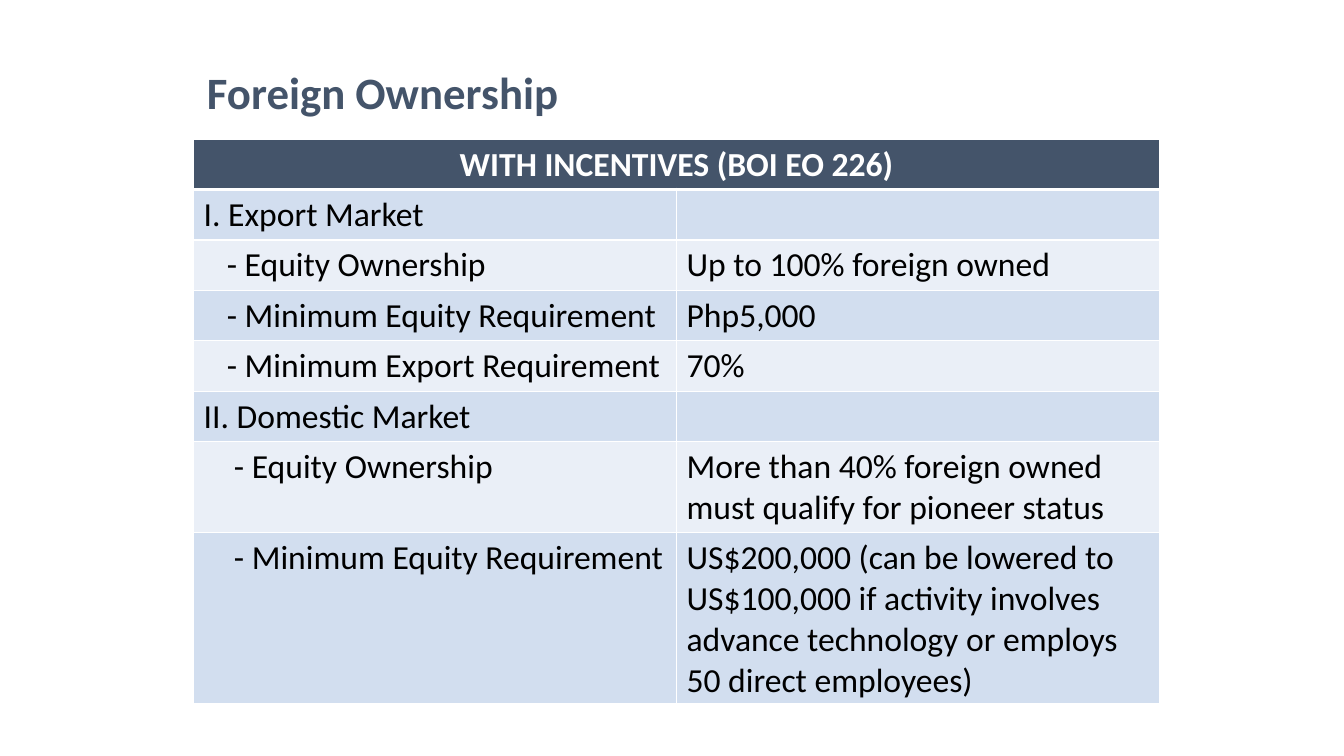
from lxml.etree import SubElement
from pptx import Presentation
from pptx.dml.color import RGBColor
from pptx.enum.shapes import MSO_SHAPE
from pptx.enum.text import MSO_ANCHOR, MSO_AUTO_SIZE, PP_ALIGN
from pptx.oxml import parse_xml
from pptx.oxml.ns import nsdecls, qn
from pptx.util import Inches, Pt

SLATE = RGBColor(0x44, 0x54, 0x6A)
WHITE = RGBColor(0xFF, 0xFF, 0xFF)
BLACK = RGBColor(0x00, 0x00, 0x00)
BAND_DARK = RGBColor(0xD2, 0xDE, 0xEF)
BAND_LIGHT = RGBColor(0xEA, 0xEF, 0xF7)


def write(frame, text, size=24, color=BLACK, bold=False, align=PP_ALIGN.LEFT):
    paragraph = frame.paragraphs[0]
    paragraph.alignment = align
    run = paragraph.add_run()
    run.text = text
    run.font.name = "Calibri"
    run.font.size = Pt(size)
    run.font.bold = bold
    run.font.color.rgb = color
    return run


def set_borders(cell, top=1, bottom=1):
    properties = cell._tc.get_or_add_tcPr()
    widths = {"lnL": 1, "lnR": 1, "lnT": top, "lnB": bottom}
    for index, (side, width) in enumerate(widths.items()):
        properties.insert(index, parse_xml(
            f'<a:{side} {nsdecls("a")} w="{Pt(width)}"><a:solidFill>'
            f'<a:srgbClr val="{WHITE}"/></a:solidFill></a:{side}>'))


presentation = Presentation()
presentation.slide_width = Inches(13.33)
presentation.slide_height = Inches(7.5)
slide = presentation.slides.add_slide(presentation.slide_layouts[6])

# Title with a soft text shadow
title = slide.shapes.add_shape(MSO_SHAPE.ROUNDED_RECTANGLE, Inches(1.92),
                               Inches(0.55), Inches(7.3), Inches(0.71))
title.shadow.inherit = False
title.fill.background()
title.line.fill.background()
title.text_frame.word_wrap = True
title.text_frame.auto_size = MSO_AUTO_SIZE.SHAPE_TO_FIT_TEXT
title.text_frame.vertical_anchor = MSO_ANCHOR.MIDDLE
title_run = write(title.text_frame, "Foreign Ownership", size=32, color=SLATE, bold=True)
effects = parse_xml(
    f'<a:effectLst {nsdecls("a")}><a:outerShdw blurRad="38100" dist="38100" dir="2700000">'
    '<a:srgbClr val="000000"><a:alpha val="43000"/></a:srgbClr></a:outerShdw></a:effectLst>')
title_run.font._element.find(qn("a:solidFill")).addnext(effects)

# Table rows: label, indent in inches, value, row height
ROWS = [
    ("I. Export Market", 0, "", 0.5),
    ("- Equity Ownership", 0.23, "Up to 100% foreign owned", 0.5),
    ("- Minimum Equity Requirement", 0.23, "Php5,000", 0.5),
    ("- Minimum Export Requirement", 0.23, "70%", 0.5),
    ("II. Domestic Market", 0, "", 0.5),
    ("- Equity Ownership", 0.3,
     "More than 40% foreign owned must qualify for pioneer status", 0.9),
    ("- Minimum Equity Requirement", 0.3,
     "US$200,000 (can be lowered to US$100,000 if activity involves "
     "advance technology or employs 50 direct employees)", 1.7),
]
table = slide.shapes.add_table(len(ROWS) + 1, 2, Inches(1.92), Inches(1.38),
                               Inches(9.58), Inches(5.6)).table

# Header across both columns
table.rows[0].height = Inches(0.5)
header = table.cell(0, 0)
header.merge(table.cell(0, 1))
write(header.text_frame, "WITH INCENTIVES (BOI EO 226)", color=WHITE, bold=True,
      align=PP_ALIGN.CENTER)
for cell in table.rows[0].cells:
    cell.fill.solid()
    cell.fill.fore_color.rgb = SLATE
    set_borders(cell, bottom=3)

# Banded body
for number, (label, indent, value, height) in enumerate(ROWS, start=1):
    table.rows[number].height = Inches(height)
    for cell, text in zip(table.rows[number].cells, (label, value)):
        cell.fill.solid()
        cell.fill.fore_color.rgb = BAND_DARK if number % 2 else BAND_LIGHT
        set_borders(cell, top=3 if number == 1 else 1)
        if text:
            write(cell.text_frame, text)
    table.cell(number, 0).margin_left = Inches(0.1 + indent)

presentation.save("out.pptx")
